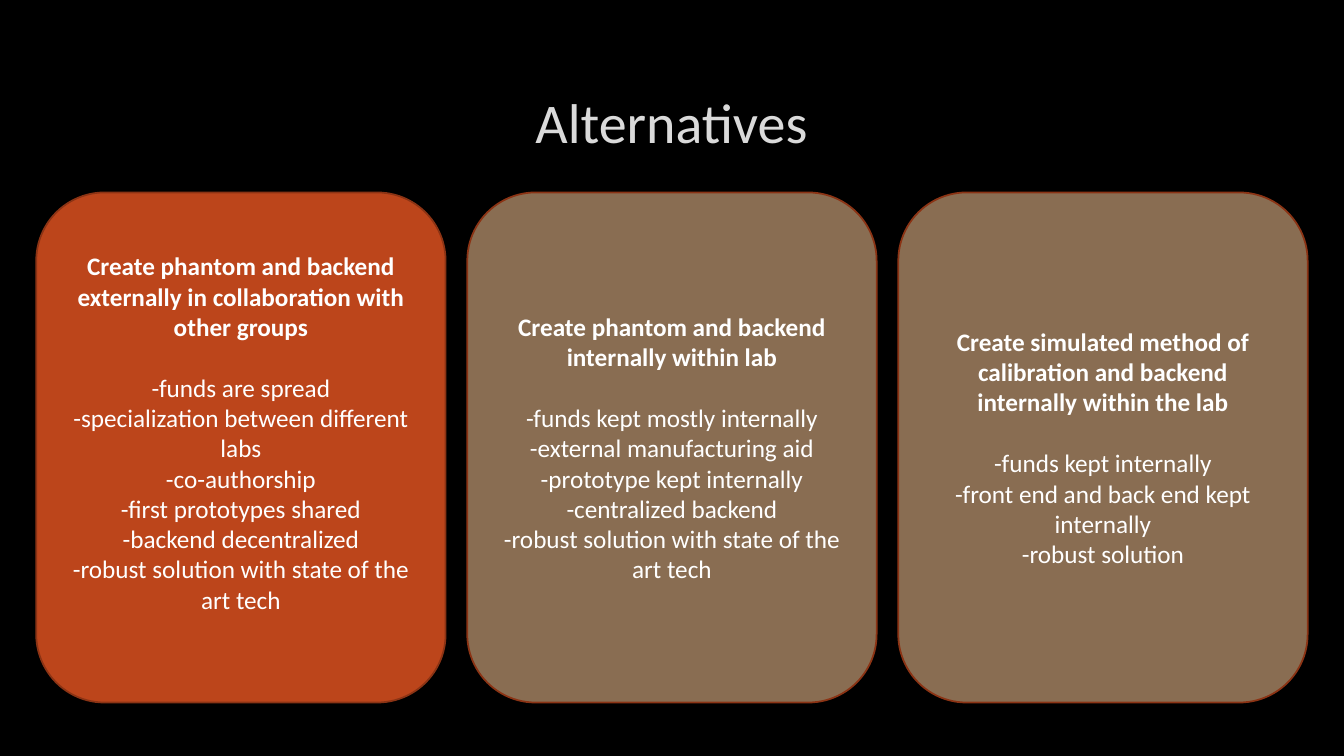
from dataclasses import dataclass

from pptx import Presentation
from pptx.dml.color import RGBColor
from pptx.enum.shapes import MSO_SHAPE
from pptx.enum.text import MSO_ANCHOR, PP_ALIGN
from pptx.util import Inches, Pt


@dataclass(frozen=True)
class Theme:
    background: RGBColor = RGBColor.from_string("000000")
    title: RGBColor = RGBColor.from_string("DADADA")
    text: RGBColor = RGBColor.from_string("FFFFFF")
    highlight: RGBColor = RGBColor.from_string("BC451B")
    card: RGBColor = RGBColor.from_string("896D52")
    border: RGBColor = RGBColor.from_string("8B3314")
    font: str = "Calibri"
    title_size: Pt = Pt(40)
    text_size: Pt = Pt(18)
    heading_gap: Pt = Pt(22)


theme = Theme()

# Heading, points, fill, bottom inset in inches
alternatives = [
    ("Create phantom and backend externally in collaboration with other groups",
     ["-funds are spread",
      "-specialization between different labs",
      "-co-authorship",
      "-first prototypes shared",
      "-backend decentralized",
      "-robust solution with state of the art tech"],
     theme.highlight, 0.35),
    ("Create phantom and backend internally within lab",
     ["-funds kept mostly internally",
      "-external manufacturing aid",
      "-prototype kept internally",
      "-centralized backend",
      "-robust solution with state of the art tech"],
     theme.card, 0.05),
    ("Create simulated method of calibration and backend internally within the lab",
     ["-funds kept internally",
      "-front end and back end kept internally",
      "-robust solution"],
     theme.card, 0.05),
]


def format_paragraph(paragraph, size, color, bold=False):
    paragraph.alignment = PP_ALIGN.CENTER
    paragraph.font.name = theme.font
    paragraph.font.size = size
    paragraph.font.color.rgb = color
    paragraph.font.bold = bold


presentation = Presentation()
presentation.slide_width = Inches(13.33)
presentation.slide_height = Inches(7.5)
slide = presentation.slides.add_slide(presentation.slide_layouts[5])
slide.background.fill.solid()
slide.background.fill.fore_color.rgb = theme.background

title = slide.shapes.title
title.left, title.top = Inches(1), Inches(0.67)
title.width, title.height = Inches(11.32), Inches(1.06)
title.text_frame.text = "Alternatives"
title.text_frame.vertical_anchor = MSO_ANCHOR.MIDDLE
format_paragraph(title.text_frame.paragraphs[0], theme.title_size, theme.title)

card_left, card_top, card_width, card_height = 0.36, 1.91, 4.06, 5.06
card_gap = (12.97 - card_left - 3 * card_width) / 2

for column, (heading, points, fill, bottom_inset) in enumerate(alternatives):
    card = slide.shapes.add_shape(
        MSO_SHAPE.ROUNDED_RECTANGLE,
        Inches(card_left + column * (card_width + card_gap)), Inches(card_top),
        Inches(card_width), Inches(card_height))
    card.shadow.inherit = False
    card.fill.solid()
    card.fill.fore_color.rgb = fill
    card.line.color.rgb = theme.border
    card.line.width = Pt(1.25)

    frame = card.text_frame
    frame.word_wrap = True
    frame.vertical_anchor = MSO_ANCHOR.MIDDLE
    frame.margin_bottom = Inches(bottom_inset)
    frame.text = "\n".join([heading, *points])
    for row, paragraph in enumerate(frame.paragraphs):
        format_paragraph(paragraph, theme.text_size, theme.text, bold=row == 0)
    frame.paragraphs[0].space_after = theme.heading_gap

presentation.save("out.pptx")
